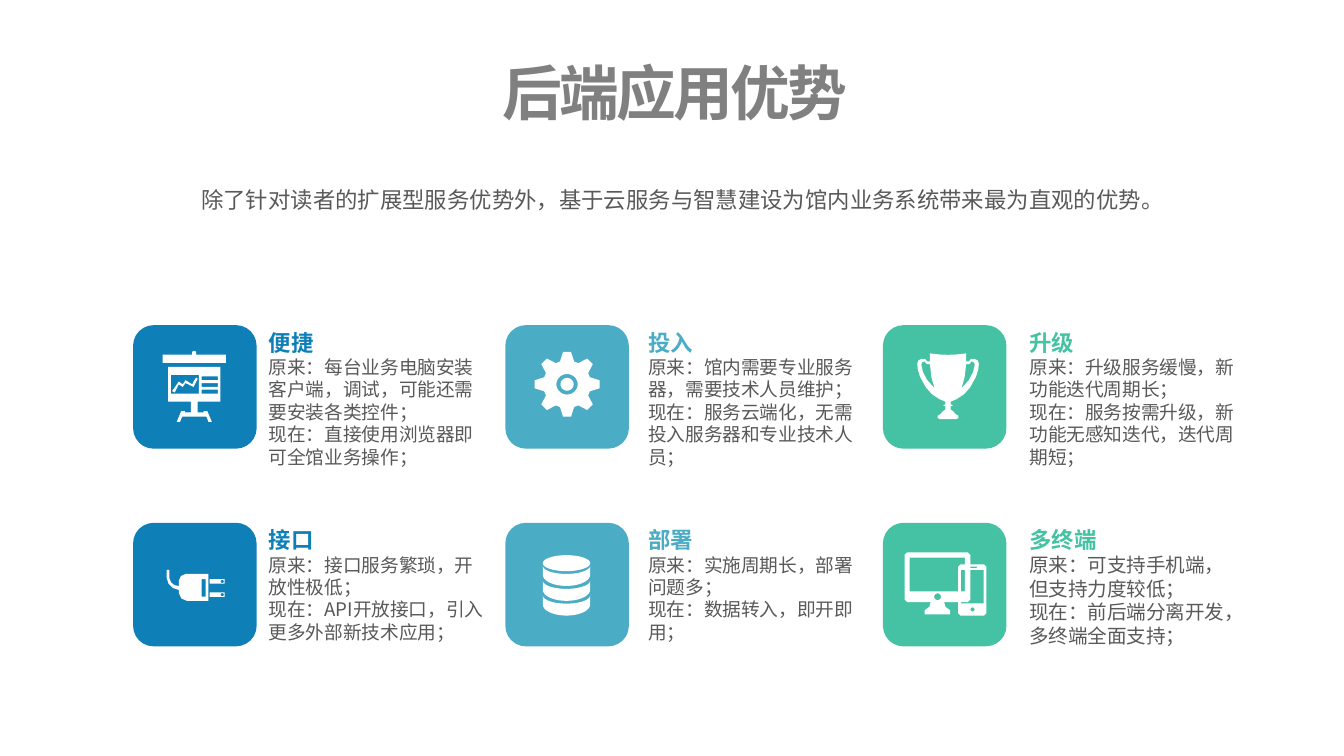
from dataclasses import dataclass
from math import cos, radians, sin

from pptx import Presentation
from pptx.dml.color import RGBColor
from pptx.enum.shapes import MSO_SHAPE as Preset
from pptx.enum.text import MSO_ANCHOR as Anchor, MSO_AUTO_SIZE as AutoSize, PP_ALIGN as Align
from pptx.util import Pt

GREY = RGBColor(0x80, 0x80, 0x80)
TEXT = RGBColor(0x59, 0x59, 0x59)
WHITE = RGBColor(0xFF, 0xFF, 0xFF)
BLUE = RGBColor(0x0E, 0x7F, 0xB7)
CYAN = RGBColor(0x4B, 0xAC, 0xC6)
GREEN = RGBColor(0x45, 0xC1, 0xA4)

HEAD_FONT = "Open Sans"
BODY_FONT = "Noto Sans CJK SC"
TILE = 66.2
TILE_TOPS = (174.2, 280.1)
TEXT_RISE = 14.2

Point = tuple[float, float]
Contour = list[Point]
Icon = list[list[Contour]]  # shapes, each an outline followed by its holes


@dataclass
class Column:
    tile_left: float
    text_left: float
    text_width: float
    color: RGBColor


@dataclass
class Card:
    heading: str
    before: str
    now: str
    icon: Icon
    size: float = 10


def rect(left: float, top: float, right: float, bottom: float, cut: float = 0) -> Contour:
    """Rectangle whose corners are cut off by the given length."""
    if not cut:
        return [(left, top), (right, top), (right, bottom), (left, bottom)]
    return [(left + cut, top), (right - cut, top), (right, top + cut), (right, bottom - cut),
            (right - cut, bottom), (left + cut, bottom), (left, bottom - cut), (left, top + cut)]


def arc(x: float, y: float, rx: float, ry: float, start: int = 0, end: int = 360) -> Contour:
    step = 10 if end > start else -10
    return [(x + rx * cos(radians(a)), y + ry * sin(radians(a)))
            for a in range(start, end + step, step)]


def mirrored(half: Contour, axis: float) -> Contour:
    """Close a right half, given as offsets from the axis, with its reflection."""
    return [(axis + x, y) for x, y in half] + [(axis - x, y) for x, y in reversed(half)]


def board_icon() -> Icon:
    roof = [(15.8, 15.8), (31.7, 15.8), (31.7, 14.2), (32.7, 13.7), (33.8, 14.2),
            (33.8, 15.8), (49.7, 15.8), (49.7, 20.2), (15.8, 20.2)]
    stand = mirrored([(14, 22.3), (14, 41), (1.8, 41), (1.8, 46.8), (5, 46.8), (5, 46.1),
                      (7, 46.1), (9.4, 51.8), (7.6, 51.8), (6.5, 49)], 32.8)
    rows = [rect(36.7, top, 45.4, top + 2.1) for top in (27.4, 31, 34.6)]
    trend = [(32.4, 30.2), (31.7, 31.7), (28.1, 29.5), (26.6, 31.7), (24.5, 30.2),
             (20.9, 35.3), (22.3, 36), (24.5, 31.7), (26.6, 33.1), (28.1, 31),
             (32.4, 33.1), (34.6, 28.8), (33.8, 28.1)]
    return [[roof], [stand, rect(20.2, 26.6, 35.3, 36.7), *rows], [trend]]


def gear_icon() -> Icon:
    x, y = 33.1, 31.7
    teeth = [(x + r * cos(radians(tooth + a)), y + r * sin(radians(tooth + a)))
             for tooth in range(0, 360, 45)
             for a, r in ((-17, 12.8), (-7, 17.5), (7, 17.5), (17, 12.8))]
    return [[teeth, arc(x, y, 5.7, 5.5)], [arc(x, y, 3.5, 3.4)]]


def trophy_icon() -> Icon:
    axis = 34.9
    cup = [(0, 15.9), (5, 15.7), (9.7, 15.1), (9.7, 19.4), (11.2, 19.4), (12.2, 18.2),
           (14, 18), (15.8, 18.8), (16.5, 20.6), (16.2, 23.8), (15, 27.6), (11.8, 33.4),
           (8.6, 37), (4.7, 39.6), (1.4, 41), (1.4, 42.4), (2.6, 43), (1.4, 43.5),
           (1.4, 45.2), (2.7, 46.1), (4, 47.6), (5.6, 48.6), (5.6, 49.8), (4.2, 50.4)]
    handle = [(9.7, 20.9), (11.4, 20.8), (12.6, 19.4), (14, 20), (14.3, 21.4),
              (13.4, 25.2), (11.2, 29.4), (7.2, 33.8), (8.9, 28)]
    return [[mirrored(cup, axis)] + [[(axis + side * x, y) for x, y in handle]
                                     for side in (1, -1)]]


def plug_icon() -> Icon:
    body = [(18, 25.2), (19.4, 25.2), (19.4, 29.5), (20.4, 32), (22.2, 33.4), (24.5, 33.9),
            (24.5, 31), (25.6, 28.6), (28.2, 27.4), (40.3, 27.4), (40.3, 41.8), (28.8, 41.8),
            (25.9, 40.6), (24.5, 37.6), (24.5, 36), (21.4, 35), (19, 32.6), (18, 29.5)]
    prongs = [[rect(41, top, 49, top + 2.4), arc(47.8, top + 1.2, 0.9, 0.8)]
              for top in (30.2, 37.3)]
    return [[body, rect(36.7, 30.2, 38.9, 39.6)], *prongs]


def database_icon() -> Icon:
    x, radius = 32.8, 12.7
    bands = [[arc(x, top, radius, 4.4, 180, 0) + arc(x, top + 4.8, radius, 6, 0, 180)]
             for top in (23, 31, 38.9)]
    return [*bands, [arc(x, 21.6, radius, 4.3)]]


def devices_icon() -> Icon:
    monitor = mirrored([(16.2, 15.8), (17.6, 17.2), (17.6, 41.1), (16.2, 42.5), (3.6, 42.5),
                        (4.3, 45), (6.8, 46.8), (6.8, 49)], 29.2)
    phone = [rect(40.3, 22.3, 55.4, 49.7, 1.2), rect(41.8, 25.2, 54, 43.2),
             rect(45.4, 23.5, 50.4, 24.2), arc(48, 46.4, 1.1, 1.1)]
    return [phone, [monitor, rect(14.4, 18.7, 43.9, 36.7), arc(29.3, 39.6, 1.8, 1.8)]]


COLUMNS = (Column(71.3, 140.4, 123.8, BLUE),
           Column(270.7, 343.7, 124.2, CYAN),
           Column(473, 547.9, 117.4, GREEN))

ROWS = (
    (Card("便捷", "原来：每台业务电脑安装客户端，调试，可能还需要安装各类控件；",
          "现在：直接使用浏览器即可全馆业务操作；", board_icon()),
     Card("投入", "原来：馆内需要专业服务器，需要技术人员维护；",
          "现在：服务云端化，无需投入服务器和专业技术人员；", gear_icon()),
     Card("升级", "原来：升级服务缓慢，新功能迭代周期长；",
          "现在：服务按需升级，新功能无感知迭代，迭代周期短；", trophy_icon())),
    (Card("接口", "原来：接口服务繁琐，开放性极低；",
          "现在：API开放接口，引入更多外部新技术应用；", plug_icon()),
     Card("部署", "原来：实施周期长，部署问题多；",
          "现在：数据转入，即开即用；", database_icon()),
     Card("多终端", "原来：可支持手机端，但支持力度较低；",
          "现在：前后端分离开发，多终端全面支持；", devices_icon(), 10.5)),
)


def place(box, left: float, top: float, width: float, height: float, anchor=Anchor.TOP):
    """Position a text shape and give its frame the common insets."""
    box.left, box.top, box.width, box.height = Pt(left), Pt(top), Pt(width), Pt(height)
    frame = box.text_frame
    frame.word_wrap = True
    frame.auto_size = AutoSize.SHAPE_TO_FIT_TEXT
    frame.vertical_anchor = anchor
    frame.margin_left = frame.margin_right = Pt(3.6)
    frame.margin_top = frame.margin_bottom = Pt(1.8)
    return frame


def style(para, name: str, size: float, color: RGBColor, bold: bool = False) -> None:
    para.font.name, para.font.size, para.font.bold = name, Pt(size), bold
    para.font.color.rgb = color


def paint(shape, color: RGBColor) -> None:
    shape.fill.solid()
    shape.fill.fore_color.rgb = color
    shape.line.fill.background()
    shape.shadow.inherit = False


def draw_icon(page, icon: Icon, left: float, top: float) -> None:
    for contours in icon:
        outlines = [[(Pt(left + x), Pt(top + y)) for x, y in contour] for contour in contours]
        builder = page.shapes.build_freeform(*outlines[0][0])
        builder.add_line_segments(outlines[0][1:])
        for hole in outlines[1:]:
            builder.move_to(*hole[0])
            builder.add_line_segments(hole[1:])
        paint(builder.convert_to_shape(), WHITE)


def draw_card(page, card: Card, column: Column, top: float, text_height: float) -> None:
    tile = page.shapes.add_shape(Preset.ROUNDED_RECTANGLE, Pt(column.tile_left), Pt(top),
                                 Pt(TILE), Pt(TILE))
    paint(tile, column.color)
    draw_icon(page, card.icon, column.tile_left, top)
    frame = place(page.shapes.add_textbox(0, 0, 0, 0), column.text_left, top - TEXT_RISE,
                  column.text_width, text_height)
    frame.text = "\n".join((card.heading, card.before, card.now))
    heading, *details = frame.paragraphs
    heading.line_spacing = 2.0
    style(heading, HEAD_FONT, 12, column.color, bold=True)
    for para in details:
        style(para, BODY_FONT, card.size, TEXT)


def main() -> None:
    deck = Presentation()
    deck.slide_width, deck.slide_height = Pt(720), Pt(405)
    page = deck.slides.add_slide(deck.slide_layouts[5])

    frame = place(page.shapes.title, 0.7, 28.1, 722.2, 42.5)
    frame.text = "后端应用优势"
    title = frame.paragraphs[0]
    title.alignment = Align.CENTER
    style(title, HEAD_FONT, 32, GREY, bold=True)
    title.runs[0].font._element.set("spc", "-150")

    frame = place(page.shapes.add_textbox(0, 0, 0, 0), 49, 97.9, 633.6, 18, Anchor.MIDDLE)
    frame.text = "除了针对读者的扩展型服务优势外，基于云服务与智慧建设为馆内业务系统带来最为直观的优势。"
    frame.paragraphs[0].alignment = Align.CENTER
    style(frame.paragraphs[0], HEAD_FONT, 12, TEXT)

    for cards, top, text_height in zip(ROWS, TILE_TOPS, (93.6, 83.5)):
        for card, column in zip(cards, COLUMNS):
            draw_card(page, card, column, top, text_height)
    deck.save("out.pptx")


if __name__ == "__main__":
    main()
